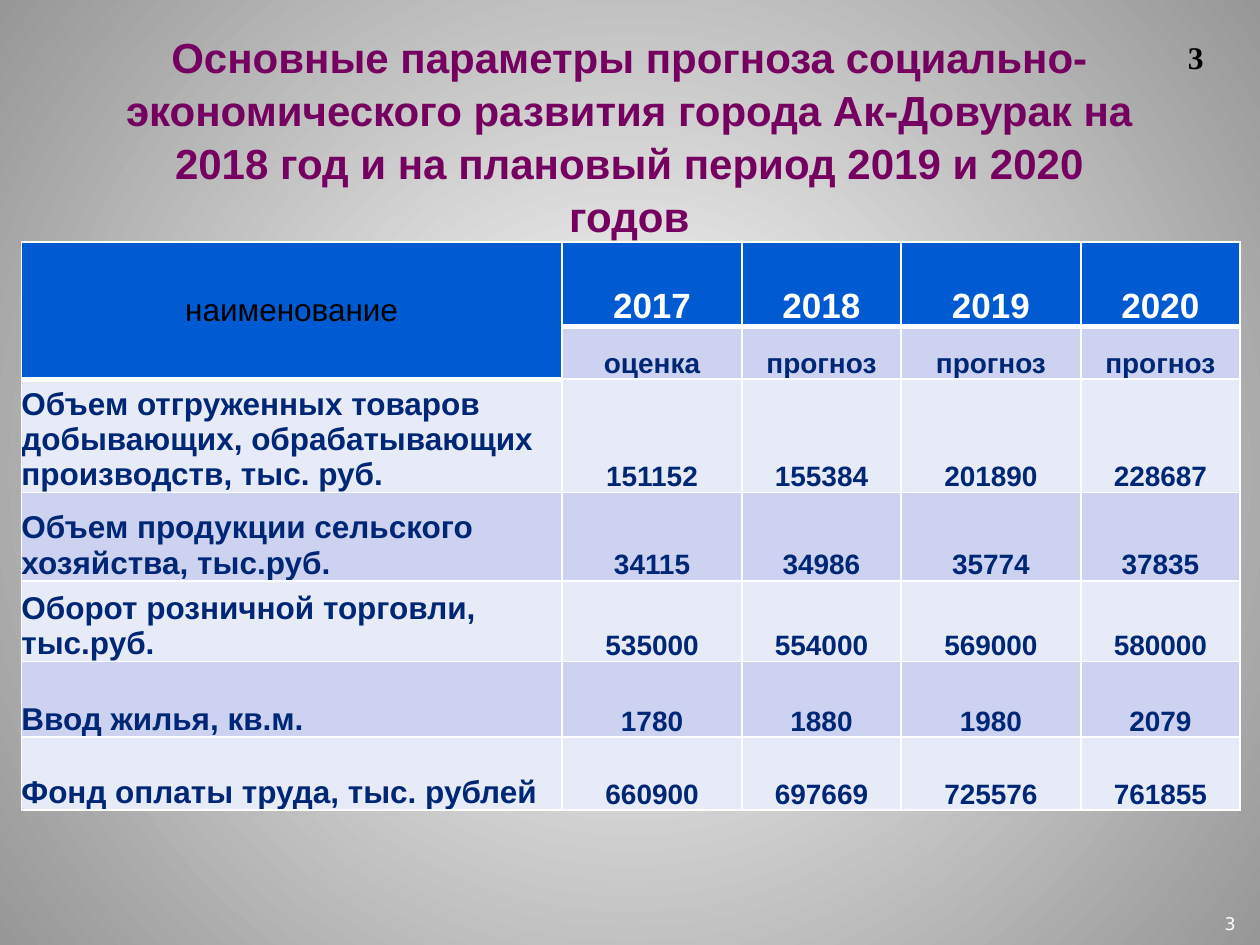
from dataclasses import dataclass

from lxml.etree import SubElement
from pptx import Presentation
from pptx.dml.color import RGBColor as RGB
from pptx.enum.text import MSO_ANCHOR as Anchor, PP_ALIGN as Align
from pptx.oxml.ns import qn
from pptx.util import Inches, Pt


@dataclass(frozen=True)
class Theme:
    font: str = "Arial"
    page_font: str = "DejaVu Sans"
    corner_font: str = "Times New Roman"
    white: str = "FFFFFF"
    black: str = "000000"
    edge_gray: str = "979797"
    title: str = "75005F"
    header: str = "005BD3"
    text: str = "002776"
    bands: tuple = ("E7EAF7", "CCD2EF")
    title_size: int = 24
    year_size: int = 20
    label_size: int = 18
    value_size: int = 16
    page_size: int = 10
    thin: int = 1
    thick: int = 3


def write(frame, text, *, size, color, font, bold=False, align=Align.LEFT,
          spacing=None):
    paragraph = frame.paragraphs[0]
    paragraph.alignment = align
    if spacing:
        paragraph.line_spacing = spacing
    run = paragraph.add_run()
    run.text = text
    run.font.name = font
    run.font.size = Pt(size)
    run.font.bold = bold
    run.font.color.rgb = RGB.from_string(color)


class SlideBuilder:
    def __init__(self, slide, theme):
        self.slide = slide
        self.theme = theme

    def background(self, center, edge):
        fill = self.slide.background.fill
        fill.gradient()
        for stop, color, position in zip(fill.gradient_stops, (center, edge), (0, 1)):
            stop.color.rgb = RGB.from_string(color)
            stop.position = position
        # Turn the linear gradient into a circular one
        linear = self.slide.element.find(".//" + qn("a:lin"))
        gradient = linear.getparent()
        gradient.remove(linear)
        circle = SubElement(gradient, qn("a:path"), path="circle")
        SubElement(circle, qn("a:fillToRect"),
                   {side: "50000" for side in "ltrb"})

    def text(self, text, left, top, width, height, margins=(0, 0, 0, 0), **style):
        box = self.slide.shapes.add_textbox(
            Inches(left), Inches(top), Inches(width), Inches(height))
        frame = box.text_frame
        frame.word_wrap = True
        (frame.margin_left, frame.margin_top,
         frame.margin_right, frame.margin_bottom) = map(Inches, margins)
        write(frame, text, **style)

    def table(self, left, top, widths, heights):
        table = self.slide.shapes.add_table(
            len(heights), len(widths), Inches(left), Inches(top),
            Inches(sum(widths)), Inches(sum(heights))).table
        for column, width in zip(table.columns, widths):
            column.width = Inches(width)
        for row, height in zip(table.rows, heights):
            row.height = Inches(height)
        return table

    def cell(self, cell, text, fill, top_line, bottom_line, anchor=Anchor.BOTTOM,
             **style):
        cell.margin_left = cell.margin_top = 0
        cell.margin_right = cell.margin_bottom = 0
        cell.vertical_anchor = anchor
        self.borders(cell, L=self.theme.thin, R=self.theme.thin,
                     T=top_line, B=bottom_line)
        cell.fill.solid()
        cell.fill.fore_color.rgb = RGB.from_string(fill)
        if text:
            write(cell.text_frame, text, font=self.theme.font, **style)

    def borders(self, cell, **sides):
        properties = cell._tc.get_or_add_tcPr()
        for side, width in sides.items():
            line = SubElement(properties, qn(f"a:ln{side}"), w=str(Pt(width)))
            solid = SubElement(line, qn("a:solidFill"))
            SubElement(solid, qn("a:srgbClr"), val=self.theme.white)


FORECAST = [
    ("наименование", "2017", "2018", "2019", "2020"),
    ("", "оценка", "прогноз", "прогноз", "прогноз"),
    ("Объем отгруженных товаров добывающих, обрабатывающих производств, тыс. руб.",
     "151152", "155384", "201890", "228687"),
    ("Объем продукции сельского хозяйства, тыс.руб.",
     "34115", "34986", "35774", "37835"),
    ("Оборот розничной торговли, тыс.руб.",
     "535000", "554000", "569000", "580000"),
    ("Ввод жилья, кв.м.", "1780", "1880", "1980", "2079"),
    ("Фонд оплаты труда, тыс. рублей",
     "660900", "697669", "725576", "761855"),
]


def is_header(row, col):
    return row == 0 or (row == 1 and col == 0)


def cell_style(theme, row, col):
    if row < 2 and col == 0:
        return dict(size=theme.label_size, color=theme.black,
                    align=Align.CENTER, anchor=Anchor.MIDDLE)
    if row == 0:
        return dict(size=theme.year_size, color=theme.white, bold=True,
                    align=Align.CENTER)
    if col == 0:
        return dict(size=theme.label_size, color=theme.text, bold=True)
    return dict(size=theme.value_size, color=theme.text, bold=True,
                align=Align.CENTER)


def main():
    theme = Theme()
    deck = Presentation()
    deck.slide_width, deck.slide_height = Inches(10), Inches(7.5)
    builder = SlideBuilder(deck.slides.add_slide(deck.slide_layouts[6]), theme)
    builder.background(theme.white, theme.edge_gray)

    # Title
    builder.text("Основные параметры прогноза социально-экономического развития "
                 "города Ак-Довурак на 2018 год и на плановый период "
                 "2019 и 2020 годов",
                 0.96, 0.23, 8.07, 1.62, size=theme.title_size, color=theme.title,
                 font=theme.font, bold=True, align=Align.CENTER, spacing=1.05)

    # Page numbers
    builder.text("3", 9.68, 7.25, 0.23, 0.17, margins=(0.04, 0, 0, 0),
                 size=theme.page_size, color=theme.white, font=theme.page_font)
    builder.text("3", 9.33, 0.25, 0.42, 0.4, margins=(0.1, 0.05, 0.1, 0.05),
                 size=theme.label_size, color=theme.black,
                 font=theme.corner_font, bold=True)

    # Forecast table
    forecast = builder.table(0.17, 1.92, (4.29, 1.43, 1.26, 1.43, 1.26),
                             (0.67, 0.42, 0.9, 0.7, 0.64, 0.6, 0.58))
    for row, texts in enumerate(FORECAST):
        for col, text in enumerate(texts):
            header = is_header(row, col)
            below_header = row > 0 and not header and is_header(row - 1, col)
            builder.cell(forecast.cell(row, col), text,
                         theme.header if header else theme.bands[row % 2],
                         theme.thick if below_header else theme.thin,
                         theme.thick if header else theme.thin,
                         **cell_style(theme, row, col))
    forecast.cell(0, 0).merge(forecast.cell(1, 0))

    deck.save("out.pptx")


if __name__ == "__main__":
    main()
